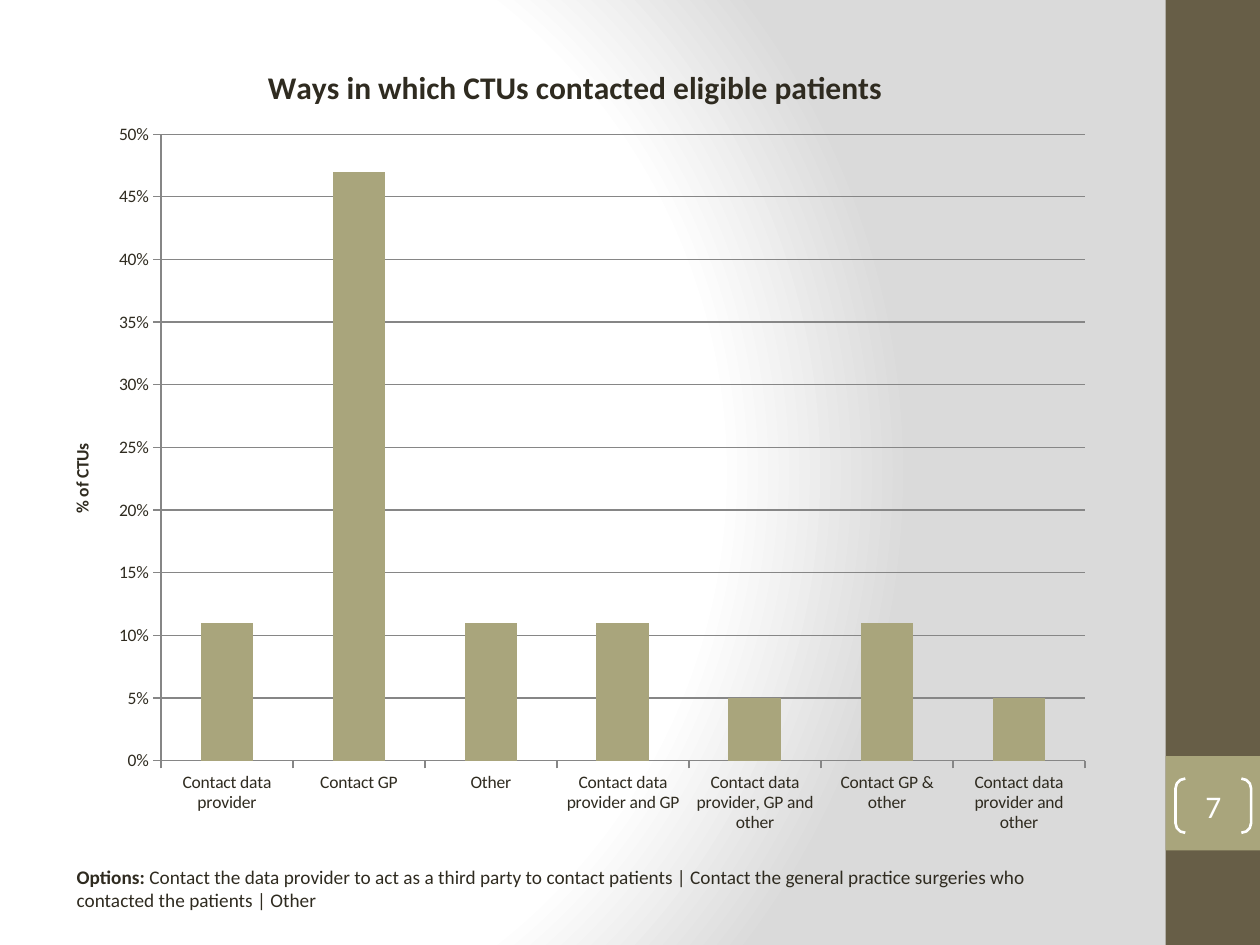
from lxml.etree import SubElement
from pptx import Presentation
from pptx.chart.data import CategoryChartData
from pptx.dml.color import RGBColor
from pptx.enum.chart import XL_CHART_TYPE, XL_TICK_MARK
from pptx.enum.shapes import MSO_SHAPE
from pptx.enum.text import MSO_ANCHOR, PP_ALIGN
from pptx.oxml import parse_xml
from pptx.oxml.ns import nsdecls, qn
from pptx.util import Inches, Pt

WIDTH, HEIGHT = 10, 7.5
FONT = "Calibri"
INK, OLIVE, SAGE, WHITE, GRID = "2F2B20", "675E47", "A9A57C", "FFFFFF", "868686"

TITLE = "Ways in which CTUs contacted eligible patients"
AXIS_TITLE = "% of CTUs"
PAGE = "7"
CONTACT_WAYS = [
    ("Contact data provider", 0.11),
    ("Contact GP", 0.47),
    ("Other", 0.11),
    ("Contact data provider and GP", 0.11),
    ("Contact data provider, GP and other", 0.05),
    ("Contact GP & other", 0.11),
    ("Contact data provider and other", 0.05),
]
OPTIONS = [
    ("Options: ", True),
    ("Contact the data provider to act as a third party to contact patients | "
     "Contact the general practice surgeries who contacted the patients | Other", False),
]
BACKGROUND_STOPS = [(0, WHITE), (75, WHITE), (100, "DADADA")]
BACKGROUND_FOCUS = {"l": 20, "t": 50, "r": 100, "b": 50}
PLOT_AREA = {"x": 0.11, "y": 0.12, "w": 0.87, "h": 0.77}

SIDEBAR = 0.75
SIDEBAR_LEFT = WIDTH - SIDEBAR
BADGE_TOP = HEIGHT * 0.8


def color(value):
    return RGBColor.from_string(value)


def style(font, size, ink=INK, bold=False):
    font.name, font.size, font.bold = FONT, Pt(size), bold
    font.color.rgb = color(ink)


def place(*inches):
    return [Inches(length) for length in inches]


def add_panel(slide, top, height, fill):
    panel = slide.shapes.add_shape(
        MSO_SHAPE.RECTANGLE, *place(SIDEBAR_LEFT, top, SIDEBAR, height))
    panel.shadow.inherit = False
    panel.fill.solid()
    panel.fill.fore_color.rgb = color(fill)
    panel.line.fill.background()


def paint_background(slide):
    stops = "".join(f'<a:gs pos="{share * 1000}"><a:srgbClr val="{tone}"/></a:gs>'
                    for share, tone in BACKGROUND_STOPS)
    focus = " ".join(f'{side}="{share * 1000}"' for side, share in BACKGROUND_FOCUS.items())
    background = parse_xml(
        f'<p:bg {nsdecls("p", "a")}><p:bgPr><a:gradFill rotWithShape="1">'
        f'<a:gsLst>{stops}</a:gsLst><a:path path="circle"><a:fillToRect {focus}/></a:path>'
        '</a:gradFill><a:effectLst/></p:bgPr></p:bg>')
    slide.element.cSld.insert(0, background)


def add_page_badge(slide):
    badge = slide.shapes.add_shape(MSO_SHAPE.DOUBLE_BRACKET, *place(9.33, 6.18, 0.6, 0.43))
    badge.adjustments[0] = 0.18
    badge.shadow.inherit = False
    badge.fill.background()
    badge.line.color.rgb = color(WHITE)
    badge.line.width = Pt(1.5)
    frame = badge.text_frame
    frame.margin_left = frame.margin_right = frame.margin_top = frame.margin_bottom = 0
    frame.vertical_anchor = MSO_ANCHOR.MIDDLE
    frame.text = PAGE
    frame.paragraphs[0].alignment = PP_ALIGN.CENTER
    style(frame.paragraphs[0].runs[0].font, 18, WHITE)


def set_title(owner, text, size):
    frame = owner.text_frame
    frame.text = text
    style(frame.paragraphs[0].runs[0].font, size, bold=True)


def add_contact_chart(slide):
    contacts = CategoryChartData(number_format="0%")
    contacts.categories = [way for way, _ in CONTACT_WAYS]
    contacts.add_series("Series 1", [share for _, share in CONTACT_WAYS])
    chart = slide.shapes.add_chart(
        XL_CHART_TYPE.COLUMN_CLUSTERED, *place(0.35, 0.29, 8.43, 6.46), contacts).chart
    style(chart.font, 10)
    chart.has_legend = False
    chart.has_title = True
    set_title(chart.chart_title, TITLE, 18)
    chart.chart_title.include_in_layout = False

    columns = chart.plots[0]
    columns.gap_width = 150
    columns.vary_by_categories = False
    fill = columns.series[0].format.fill
    fill.solid()
    fill.fore_color.rgb = color(SAGE)

    shares = chart.value_axis
    shares.minimum_scale, shares.maximum_scale, shares.major_unit = 0, 0.5, 0.05
    shares.tick_labels.number_format = "0%"
    shares.tick_labels.number_format_is_linked = False
    shares.has_title = True
    set_title(shares.axis_title, AXIS_TITLE, 10)
    shares.has_major_gridlines = True
    for axis in (shares, chart.category_axis):
        axis.major_tick_mark = XL_TICK_MARK.OUTSIDE
    for rule in (shares, chart.category_axis, shares.major_gridlines):
        rule.format.line.color.rgb = color(GRID)
        rule.format.line.width = Pt(0.75)

    plot_area = chart.element.chart.plotArea
    layout = plot_area.find(qn("c:layout"))
    if layout is None:
        layout = plot_area.makeelement(qn("c:layout"))
        plot_area.insert(0, layout)
    manual = SubElement(layout, qn("c:manualLayout"))
    settings = {"layoutTarget": "inner", "xMode": "edge", "yMode": "edge", **PLOT_AREA}
    for tag, value in settings.items():
        SubElement(manual, qn(f"c:{tag}")).set("val", str(value))


def add_options(slide):
    frame = slide.shapes.add_textbox(*place(0.51, 6.82, 8.35, 0.47)).text_frame
    frame.word_wrap = True
    for text, bold in OPTIONS:
        run = frame.paragraphs[0].add_run()
        run.text = text
        style(run.font, 11, bold=bold)


def main():
    deck = Presentation()
    deck.slide_width, deck.slide_height = place(WIDTH, HEIGHT)
    slide = deck.slides.add_slide(deck.slide_layouts[6])
    paint_background(slide)
    add_panel(slide, 0, HEIGHT, OLIVE)
    add_panel(slide, BADGE_TOP, SIDEBAR, SAGE)
    add_page_badge(slide)
    add_contact_chart(slide)
    add_options(slide)
    deck.save("out.pptx")


if __name__ == "__main__":
    main()
